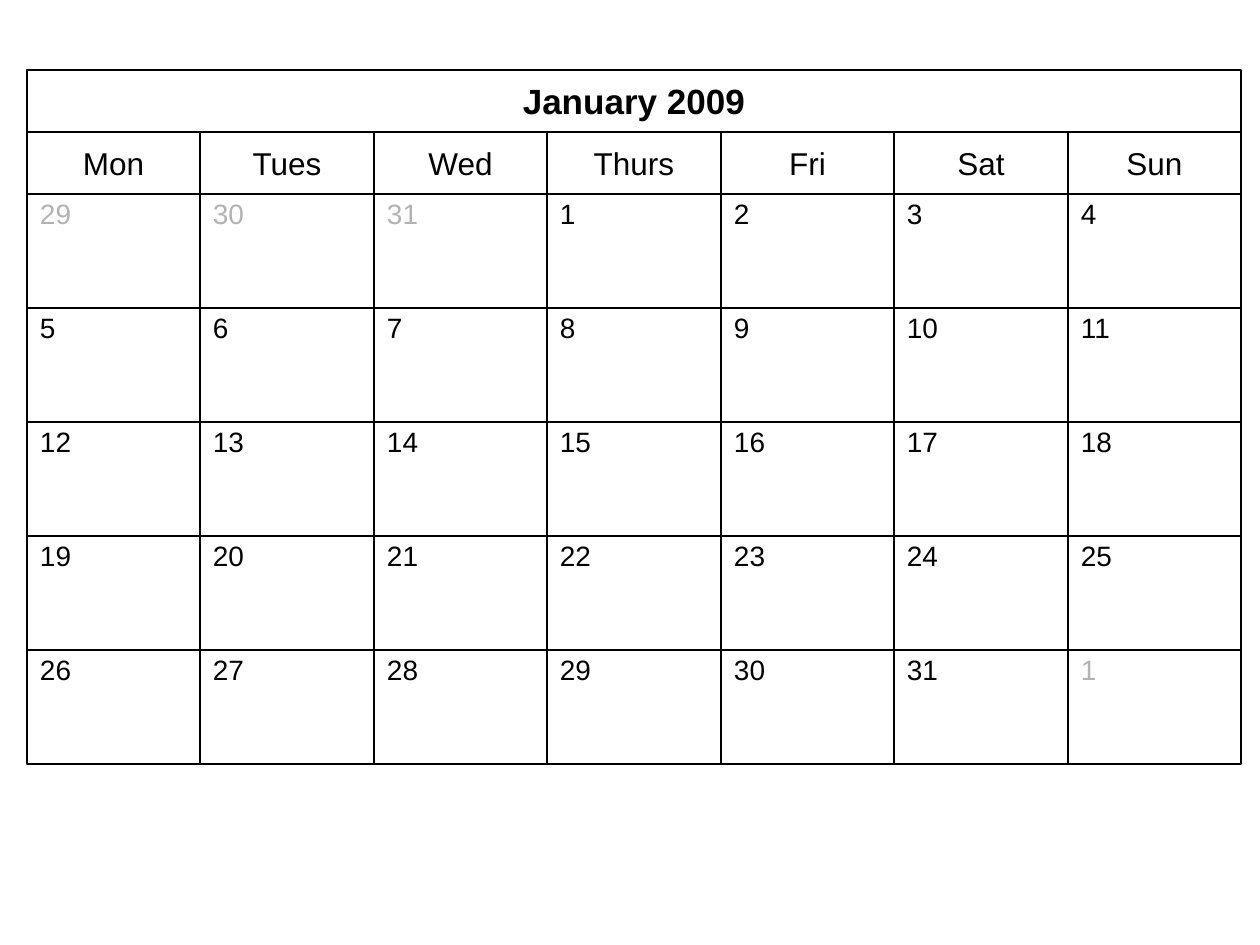
from pptx import Presentation
from pptx.dml.color import RGBColor
from pptx.enum.shapes import MSO_SHAPE
from pptx.enum.text import MSO_ANCHOR, MSO_AUTO_SIZE, PP_ALIGN
from pptx.util import Pt

EMU_PER_PX = 914400 // 126
COLORS = {"paper": "FFFFFF", "ink": "000000", "other_month": "B2B2B2"}
FONT = "Arial"
WEEKDAYS = ["Mon", "Tues", "Wed", "Thurs", "Fri", "Sat", "Sun"]
DAYS = [29, 30, 31, *range(1, 32), 1]
LEADING_DAYS, TRAILING_DAYS = 3, 1
LEFT, TOP, WIDTH = 27, 70, 1214
HEADER_HEIGHT, DAY_HEIGHT = 62, 114
WEEKDAYS_TOP = TOP + HEADER_HEIGHT
DAYS_TOP = WEEKDAYS_TOP + HEADER_HEIGHT
INSET_X, INSET_Y, HANGING = 13, 3, 48


def px(length):
    """Convert pixels to EMU."""
    return length * EMU_PER_PX


def rgb(name):
    """Look up a named colour."""
    return RGBColor.from_string(COLORS[name])


def column_edge(column):
    """Return the left edge of a weekday column in pixels."""
    return LEFT + round(WIDTH * column / len(WEEKDAYS))


def style_cell(cell, text, size, color="ink", bold=False, centered=True):
    """Give a calendar cell its outline and its formatted text."""
    cell.fill.solid()
    cell.fill.fore_color.rgb = rgb("paper")
    cell.line.color.rgb = rgb("ink")
    cell.line.width = Pt(1)
    frame = cell.text_frame
    frame.text = text
    frame.word_wrap = True
    frame.auto_size = MSO_AUTO_SIZE.NONE
    frame.vertical_anchor = MSO_ANCHOR.MIDDLE if centered else MSO_ANCHOR.TOP
    frame.margin_left = frame.margin_right = px(INSET_X)
    frame.margin_top = frame.margin_bottom = px(INSET_Y)
    label = frame.paragraphs[0]
    label.alignment = PP_ALIGN.CENTER if centered else PP_ALIGN.LEFT
    properties = label._p.get_or_add_pPr()
    properties.set("marL", str(px(HANGING)))
    properties.set("indent", str(-px(HANGING)))
    font = label.runs[0].font
    font.name, font.size, font.bold = FONT, Pt(size), bold
    font.color.rgb = rgb(color)


def add_cell(slide, column, top, height):
    """Add an empty rectangle in a weekday column."""
    left, right = column_edge(column), column_edge(column + 1)
    cell = slide.shapes.add_shape(
        MSO_SHAPE.RECTANGLE, px(left), px(top), px(right - left), px(height))
    cell.shadow.inherit = False
    return cell


def add_days(slide):
    """Add the day cells, last day at the back."""
    for index, day in reversed(list(enumerate(DAYS))):
        week, column = divmod(index, len(WEEKDAYS))
        in_month = LEADING_DAYS <= index < len(DAYS) - TRAILING_DAYS
        cell = add_cell(slide, column, DAYS_TOP + week * DAY_HEIGHT, DAY_HEIGHT)
        style_cell(cell, str(day), 16, "ink" if in_month else "other_month",
                   centered=False)


def add_weekdays(slide):
    """Add the row of weekday names."""
    for column, weekday in reversed(list(enumerate(WEEKDAYS))):
        cell = add_cell(slide, column, WEEKDAYS_TOP, HEADER_HEIGHT)
        style_cell(cell, weekday, 18)


def set_month(slide, month):
    """Place the month as the title across the calendar."""
    title = slide.shapes.title
    title.left, title.top = px(LEFT), px(TOP)
    title.width, title.height = px(WIDTH), px(HEADER_HEIGHT)
    style_cell(title, month, 20, bold=True)


def main():
    """Build the calendar slide."""
    deck = Presentation()
    deck.slide_width, deck.slide_height = px(1260), px(945)
    slide = deck.slides.add_slide(deck.slide_layouts[5])
    set_month(slide, "January 2009")
    add_days(slide)
    add_weekdays(slide)
    deck.save("out.pptx")


if __name__ == "__main__":
    main()
